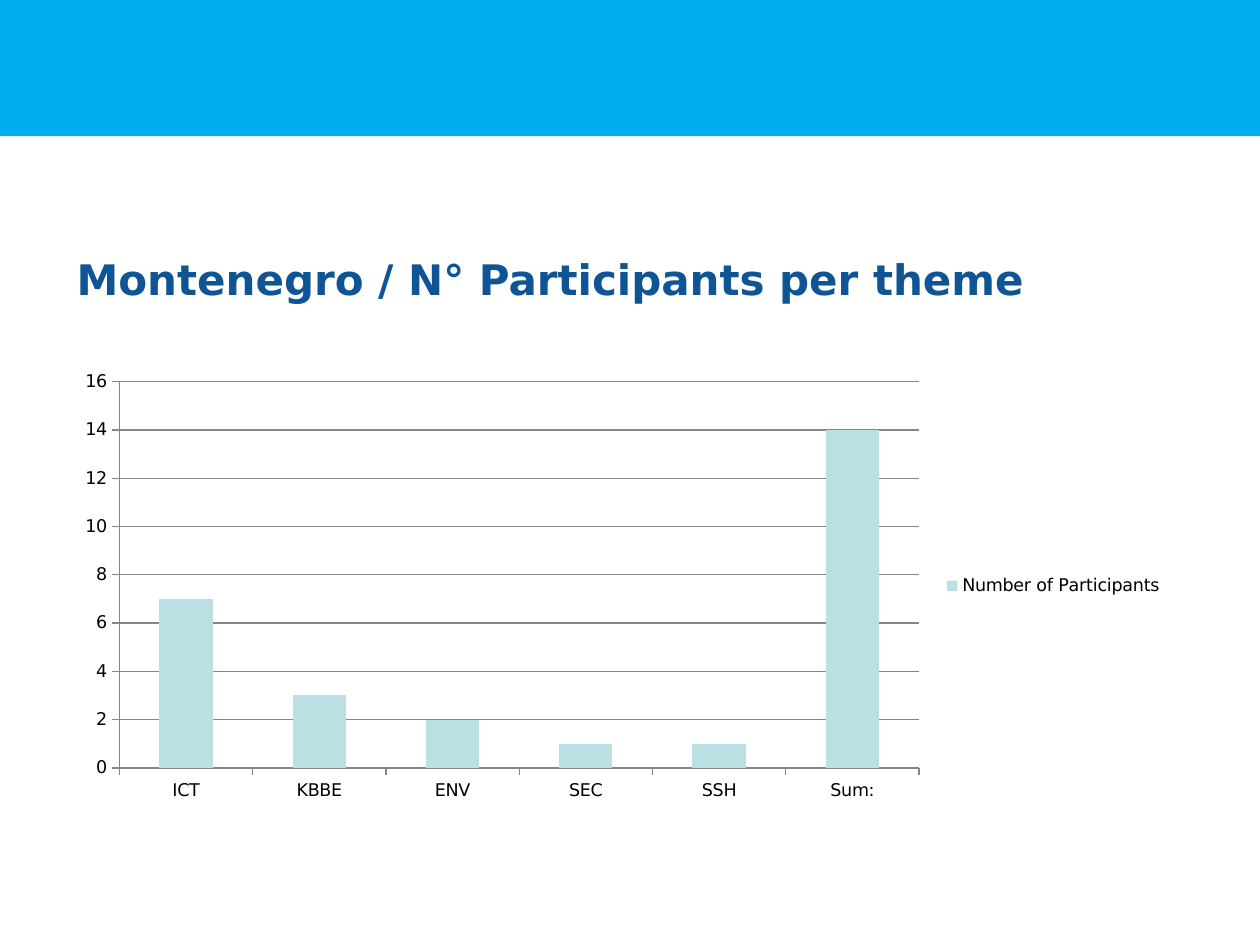
from pptx import Presentation
from pptx import util as u
from pptx.chart.data import CategoryChartData
from pptx.dml.color import RGBColor
from pptx.enum import chart as ch, shapes, text

FONT = "DejaVu Sans"
GREY = "868686"
PARTICIPANTS = {"ICT": 7, "KBBE": 3, "ENV": 2, "SEC": 1, "SSH": 1, "Sum:": 14}


def rgb(color):
    return RGBColor.from_string(color)


def box(left, top, width, height):
    return [u.Inches(v) for v in (left, top, width, height)]


def style_font(font, size, color, bold=False):
    font.name = FONT
    font.size = u.Pt(size)
    font.bold = bold
    font.color.rgb = rgb(color)


def style_line(line, color):
    line.color.rgb = rgb(color)
    line.width = u.Pt(0.75)


def add_banner(s, at, color):
    sp = s.shapes.add_shape(shapes.MSO_SHAPE.RECTANGLE, *box(*at))
    sp.shadow.inherit = False
    sp.fill.solid()
    sp.fill.fore_color.rgb = rgb(color)
    sp.line.fill.background()


def add_title(s, at, title):
    tf = s.shapes.add_textbox(*box(*at)).text_frame
    tf.word_wrap = True
    tf.vertical_anchor = text.MSO_ANCHOR.MIDDLE
    p = tf.paragraphs[0]
    # Hanging indent for a title that wraps
    pPr = p._p.get_or_add_pPr()
    pPr.set("marL", str(u.Inches(0.39)))
    pPr.set("indent", str(u.Inches(-0.39)))
    r = p.add_run()
    r.text = title
    style_font(r.font, 24, "0F5494", bold=True)


def add_column_chart(s, at, name, values, color):
    data = CategoryChartData(number_format="#,##0")
    data.categories = list(values)
    data.add_series(name, list(values.values()))
    chart = s.shapes.add_chart(
        ch.XL_CHART_TYPE.COLUMN_CLUSTERED, *box(*at), data).chart
    style_font(chart.font, 10, "000000")
    chart.has_title = False
    chart.has_legend = True
    chart.legend.position = ch.XL_LEGEND_POSITION.RIGHT
    chart.legend.include_in_layout = False

    for axis in (chart.category_axis, chart.value_axis):
        axis.major_tick_mark = ch.XL_TICK_MARK.OUTSIDE
        axis.minor_tick_mark = ch.XL_TICK_MARK.NONE
        style_line(axis.format.line, GREY)
    axis = chart.value_axis
    axis.minimum_scale, axis.maximum_scale, axis.major_unit = 0, 16, 2
    axis.has_major_gridlines = True
    style_line(axis.major_gridlines.format.line, GREY)

    plot = chart.plots[0]
    plot.gap_width = 150
    plot.vary_by_categories = False
    fill = plot.series[0].format.fill
    fill.solid()
    fill.fore_color.rgb = rgb(color)


def main():
    prs = Presentation()
    prs.slide_width, prs.slide_height = u.Inches(10), u.Inches(7.5)
    s = prs.slides.add_slide(prs.slide_layouts[6])
    add_banner(s, (0, 0, 10, 1.08), "00AEF0")
    add_title(s, (0.51, 1.7, 9, 1.02), "Montenegro / N° Participants per theme")
    add_column_chart(s, (0.5, 2.88, 8.83, 3.54), "Number of Participants",
                     PARTICIPANTS, "BBE0E3")
    prs.save("out.pptx")


if __name__ == "__main__":
    main()
